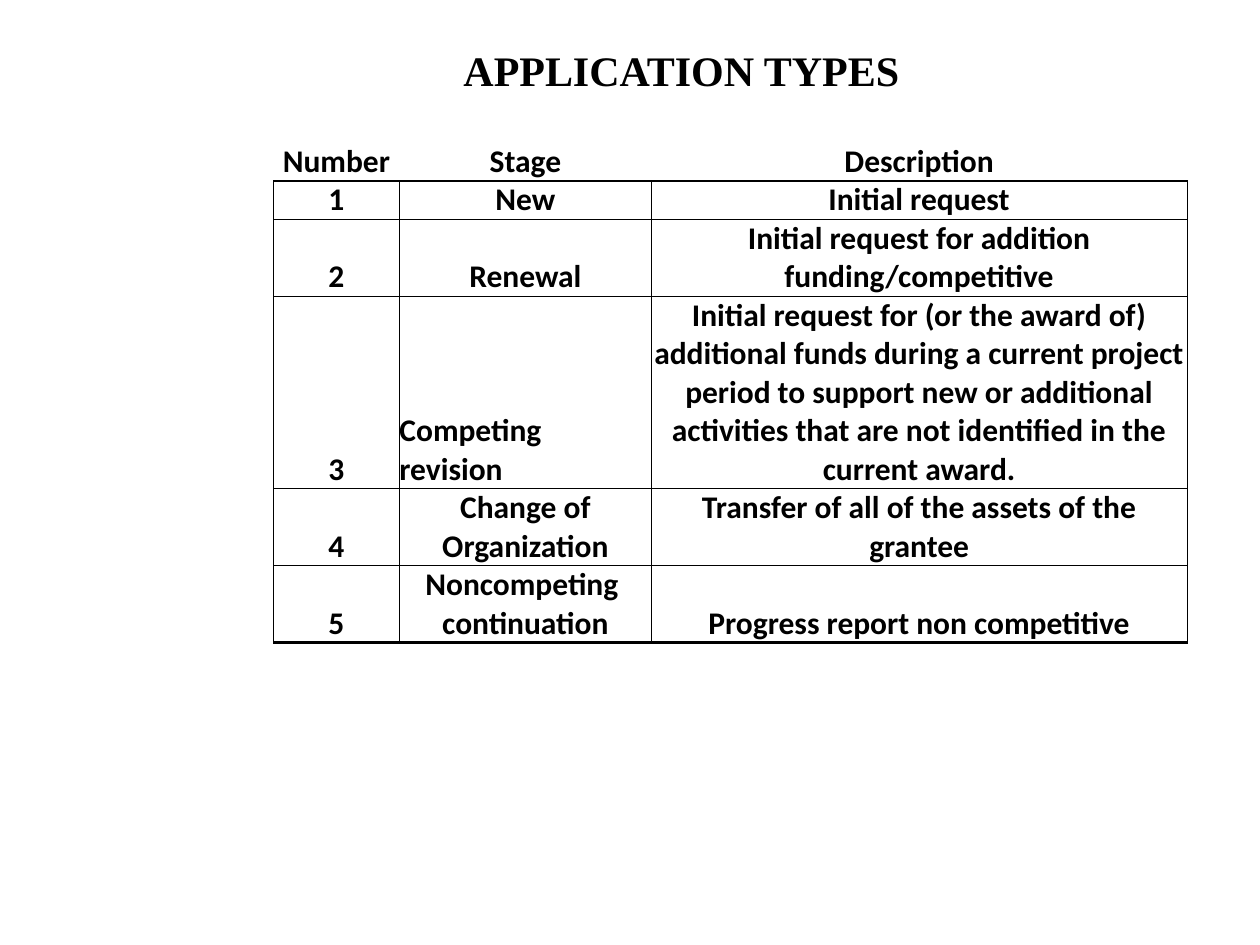
from lxml import etree
from pptx import Presentation
from pptx import util as u
from pptx.dml.color import RGBColor
from pptx.enum import text
from pptx.oxml import ns

COLORS = {"ink": "000000"}
WIDTH, HEIGHT = 10, 7.5
COLUMNS = [1, 2, 4.25]
ROW = 0.3
ROW_LINES = [1, 1, 1, 2, 5, 2, 2]
HEADER = ["Number", "Stage", "Description"]
TYPES = [
    ["New", "Initial request"],
    ["Renewal", "Initial request for addition funding/competitive"],
    ["Competing revision",
     "Initial request for (or the award of) additional funds during a current "
     "project period to support new or additional activities that are not "
     "identified in the current award."],
    ["Change of Organization", "Transfer of all of the assets of the grantee"],
    ["Noncompeting \ncontinuation", "Progress report non competitive"],
]


def write(frame, words, font="Calibri", size=18, align=text.PP_ALIGN.CENTER):
    para = frame.paragraphs[0]
    para.alignment = align
    para.text = words
    for span in para.runs:
        span.font.name = font
        span.font.size = u.Pt(size)
        span.font.bold = True
        span.font.color.rgb = RGBColor.from_string(COLORS["ink"])
    if not words:
        end = etree.SubElement(para._p, ns.qn("a:endParaRPr"))
        end.set("sz", str(size * 100))


def draw_borders(cell, **weights):
    props = cell._tc.get_or_add_tcPr()
    for side in "LRTB":
        weight = weights.get(side, 0)
        line = etree.SubElement(props, ns.qn(f"a:ln{side}"))
        if weight:
            line.set("w", str(u.Pt(weight)))
            fill = etree.SubElement(line, ns.qn("a:solidFill"))
            etree.SubElement(fill, ns.qn("a:srgbClr")).set("val", COLORS["ink"])
        else:
            etree.SubElement(line, ns.qn("a:noFill"))


def row_borders(index, last):
    if index == 0:
        return {}
    if index == 1:
        return {"B": 1}
    return {"L": 0.5, "R": 0.5, "T": 1 if index == 2 else 0.5,
            "B": 2 if index == last else 0.5}


def add_title(page, words):
    box = page.shapes.add_textbox(*map(u.Inches, (3.58, 0.3, 3.7, 0.51)))
    frame = box.text_frame
    frame.word_wrap = False
    frame.auto_size = text.MSO_AUTO_SIZE.SHAPE_TO_FIT_TEXT
    write(frame, words, font="Times New Roman", size=24,
          align=text.PP_ALIGN.LEFT)


def add_type_table(page, rows):
    place = (2.17, 0.83, sum(COLUMNS), ROW * sum(ROW_LINES))
    table = page.shapes.add_table(
        len(rows), len(COLUMNS), *map(u.Inches, place)).table
    table.first_row = table.horz_banding = False
    for column, width in zip(table.columns, COLUMNS):
        column.width = u.Inches(width)
    for index, (row, lines) in enumerate(zip(table.rows, ROW_LINES)):
        row.height = u.Inches(ROW * lines)
        for cell, words in zip(row.cells, rows[index]):
            cell.margin_left = cell.margin_right = 0
            cell.margin_top = cell.margin_bottom = 0
            cell.vertical_anchor = text.MSO_ANCHOR.BOTTOM
            draw_borders(cell, **row_borders(index, len(rows) - 1))
            cell.fill.background()
            justified = words == "Competing revision"
            write(cell.text_frame, words, size=18 if words else 12,
                  align=text.PP_ALIGN.JUSTIFY if justified
                  else text.PP_ALIGN.CENTER)


def main():
    deck = Presentation()
    deck.slide_width, deck.slide_height = u.Inches(WIDTH), u.Inches(HEIGHT)
    page = deck.slides.add_slide(deck.slide_layouts[6])
    numbered = [[str(number), *entry] for number, entry in enumerate(TYPES, 1)]
    add_type_table(page, [[""] * len(COLUMNS), HEADER, *numbered])
    add_title(page, "APPLICATION TYPES")
    deck.save("out.pptx")


if __name__ == "__main__":
    main()
